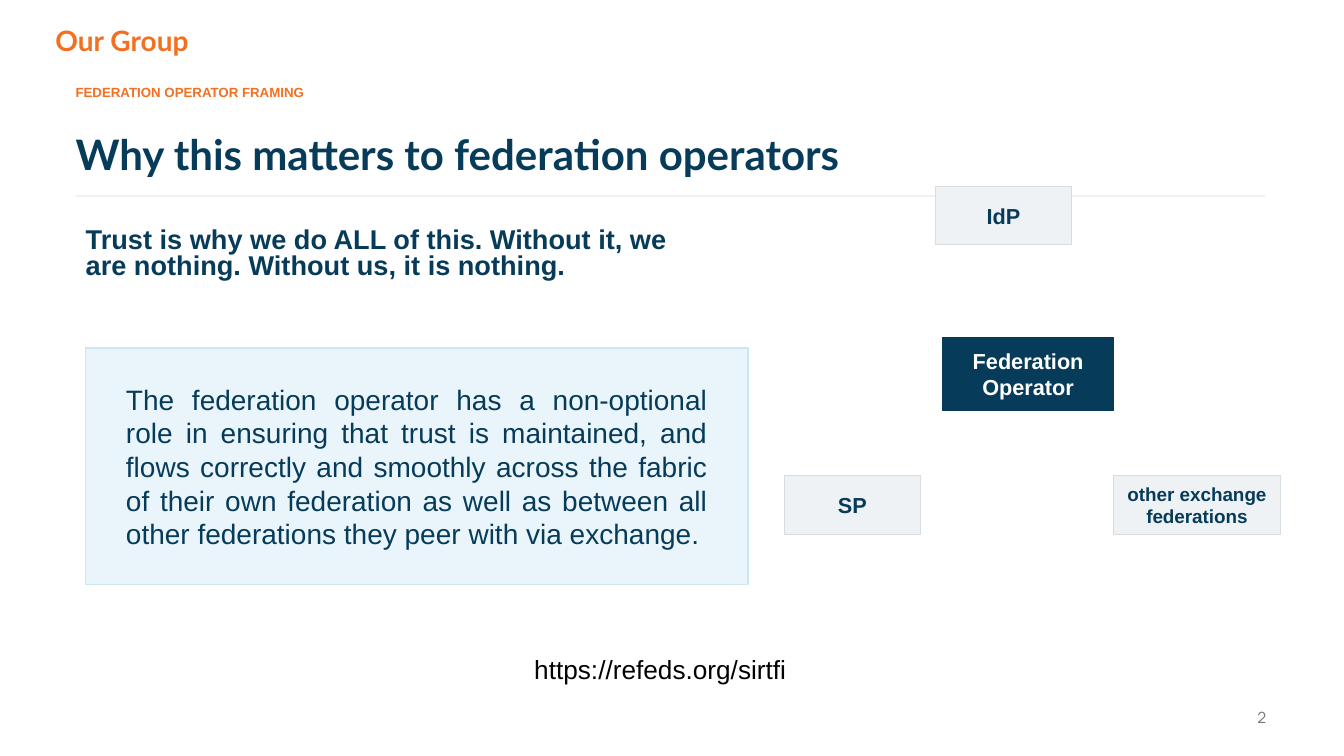
from lxml.etree import SubElement
from pptx import Presentation
from pptx.dml.color import RGBColor
from pptx.enum.shapes import MSO_CONNECTOR as Link, MSO_SHAPE as Shape
from pptx.enum.text import MSO_ANCHOR as Anchor, PP_ALIGN as Align
from pptx.oxml.ns import qn
from pptx.util import Pt

HUES = {
    "navy": "073B5A", "orange": "F36F21", "white": "FFFFFF", "black": "000000",
    "gray": "757575", "mist": "EEF2F4", "edge": "D6DEE3",
    "sky": "E9F5FB", "rim": "CCE7F3",
}
INSET = (7.2, 3.6)


def hue(name):
    return RGBColor.from_string(HUES[name])


def write(frame, text, size=15.5, font="Arial", color="navy", bold=False,
          align=Align.LEFT, anchor=Anchor.MIDDLE, pad=(0, 0), space=None):
    """Fill a text frame; each line of text becomes a paragraph."""
    frame.word_wrap = True
    frame.vertical_anchor = anchor
    frame.margin_left = frame.margin_right = Pt(pad[0])
    frame.margin_top = frame.margin_bottom = Pt(pad[1])
    frame.text = text
    for para in frame.paragraphs:
        para.alignment = align
        para.line_spacing = space
        para.font.size = Pt(size)
        para.font.name = font
        para.font.bold = bold
        para.font.color.rgb = hue(color)


def label(slide, area, text, **style):
    box = slide.shapes.add_textbox(*map(Pt, area))
    write(box.text_frame, text, **style)


def panel(slide, area, text, fill="mist", edge="edge", width=0.75, **style):
    box = slide.shapes.add_shape(Shape.RECTANGLE, *map(Pt, area))
    box.shadow.inherit = False
    box.fill.solid()
    box.fill.fore_color.rgb = hue(fill)
    box.line.color.rgb = hue(edge)
    box.line.width = Pt(width)
    write(box.text_frame, text, **style)


def node(slide, area, text, **style):
    panel(slide, area, text, bold=True, align=Align.CENTER, pad=INSET, **style)


def rule(slide, left, right, y):
    line = slide.shapes.add_connector(Link.STRAIGHT, Pt(left), Pt(y), Pt(right), Pt(y))
    line.line.color.rgb = hue("mist")
    line.line.width = Pt(1)
    SubElement(line._element.spPr, qn("a:effectLst"))


def main():
    deck = Presentation()
    deck.slide_width, deck.slide_height = Pt(960), Pt(540)
    slide = deck.slides.add_slide(deck.slide_layouts[6])

    label(slide, (39.6, 15.84, 140.4, 25.2), "Our Group", size=20, font="Lato",
          color="orange", bold=True)
    label(slide, (54, 59.04, 734.4, 12.96), "FEDERATION OPERATOR FRAMING",
          size=9.5, color="orange", bold=True)
    label(slide, (54, 92.16, 835.2, 36), "Why this matters to federation operators",
          size=30, font="Lato", bold=True)
    rule(slide, 54, 903.6, 139.9)

    label(slide, (61.2, 149.76, 428.4, 64.08),
          "Trust is why we do ALL of this. Without it, we are nothing. "
          "Without us, it is nothing.", size=19.4, bold=True, space=0.8)
    panel(slide, (61.2, 248.4, 473.04, 169.2),
          "The federation operator has a non-optional role in ensuring that trust is "
          "maintained, and flows correctly and smoothly across the fabric of their own "
          "federation as well as between all other federations they peer with via exchange.",
          fill="sky", edge="rim", width=1.2, size=20, align=Align.JUSTIFY, pad=(28.8, 0))

    node(slide, (673.2, 241.2, 122.4, 51.84), "Federation\nOperator",
         fill="navy", edge="navy", color="white")
    for left, top, width, text, size in (
        (668.16, 133.2, 97.2, "IdP", 15.5),
        (560.16, 339.84, 97.2, "SP", 15.5),
        (795.6, 339.84, 118.8, "other exchange federations", 13.5),
    ):
        node(slide, (left, top, width, 41.76), text, size=size)

    label(slide, (231.12, 462.96, 480.96, 30.24), "https://refeds.org/sirtfi", size=18.7,
          color="black", align=Align.CENTER, anchor=Anchor.TOP, pad=INSET)
    label(slide, (828.72, 498.24, 82.8, 28.8), "2", size=11, font="Manrope",
          color="gray", align=Align.RIGHT, pad=INSET)
    deck.save("out.pptx")


if __name__ == "__main__":
    main()
